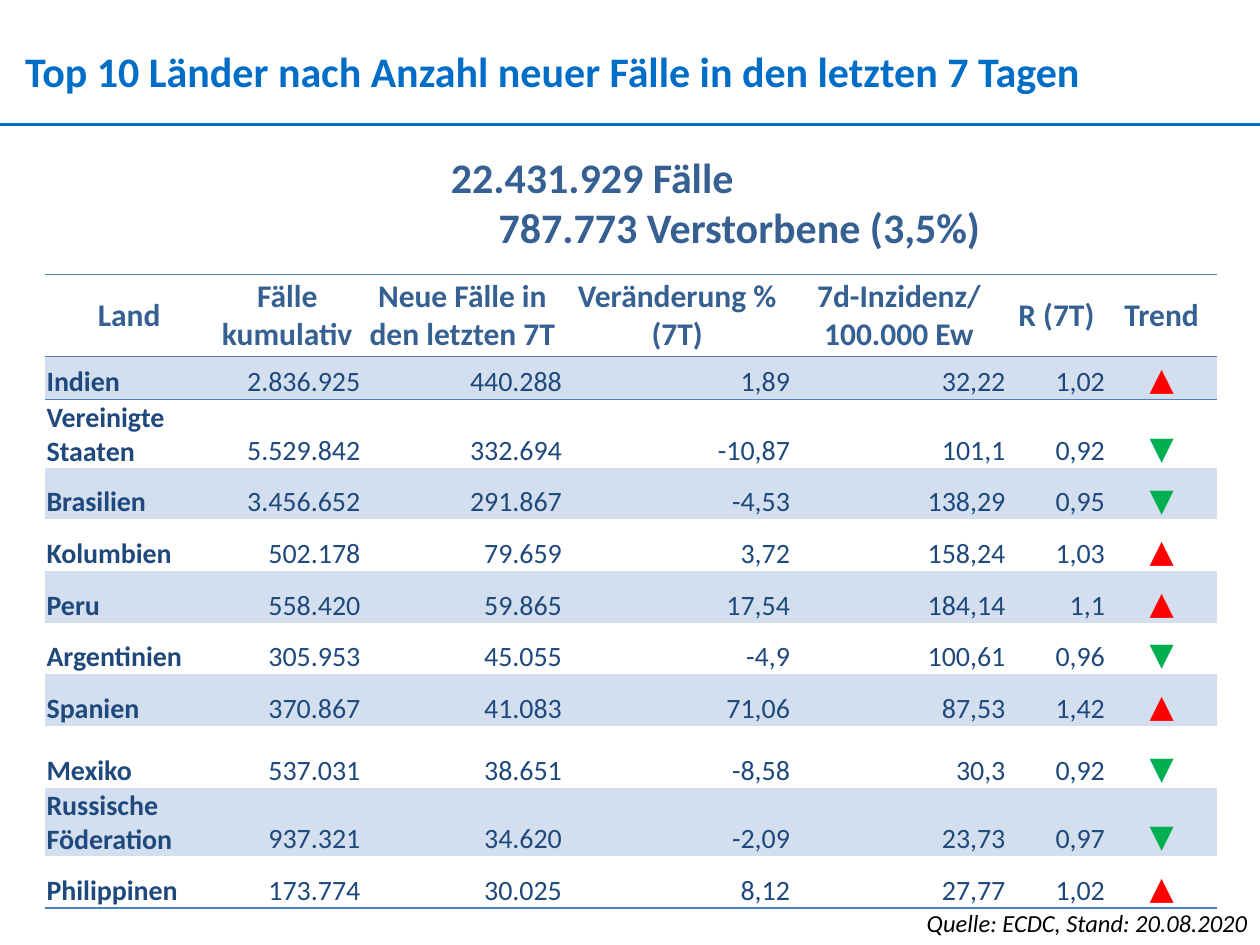
from lxml.etree import SubElement
from pptx import Presentation
from pptx.dml.color import RGBColor
from pptx.enum.shapes import MSO_CONNECTOR as CONN
from pptx.enum.text import MSO_ANCHOR as ANCHOR, MSO_AUTO_SIZE as AUTO, PP_ALIGN as ALIGN
from pptx.oxml.ns import qn
from pptx.util import Inches, Pt

COLORS = {"title": "006EC7", "head": "366092", "body": "1F497D", "band": "D3DFEE",
          "rule": "4F81BD", "up": "FF0000", "down": "00B050", "source": "000000"}
NO_STYLE = "{2D5ABB26-0587-4C30-8999-92F81FD0307C}"
COLS = [1.33, 1.18, 1.6, 1.81, 1.71, 0.79, 0.88]
ROWS = [0.65, 0.34, 0.49, 0.41, 0.41, 0.41, 0.41, 0.41, 0.49, 0.41, 0.41]
HEADER = ["Land", "Fälle kumulativ", "Neue Fälle in den letzten 7T", "Veränderung % (7T)",
          "7d-Inzidenz/ 100.000 Ew", "R (7T)", "Trend"]
COUNTRIES = [
    ["Indien", "2.836.925", "440.288", "1,89", "32,22", "1,02", "▲"],
    ["Vereinigte Staaten", "5.529.842", "332.694", "-10,87", "101,1", "0,92", "▼"],
    ["Brasilien", "3.456.652", "291.867", "-4,53", "138,29", "0,95", "▼"],
    ["Kolumbien", "502.178", "79.659", "3,72", "158,24", "1,03", "▲"],
    ["Peru", "558.420", "59.865", "17,54", "184,14", "1,1", "▲"],
    ["Argentinien", "305.953", "45.055", "-4,9", "100,61", "0,96", "▼"],
    ["Spanien", "370.867", "41.083", "71,06", "87,53", "1,42", "▲"],
    ["Mexiko", "537.031", "38.651", "-8,58", "30,3", "0,92", "▼"],
    ["Russische Föderation", "937.321", "34.620", "-2,09", "23,73", "0,97", "▼"],
    ["Philippinen", "173.774", "30.025", "8,12", "27,77", "1,02", "▲"],
]


class Deck:
    """Holds the style and the current slide and adds its elements."""

    font = "Calibri"

    def __init__(self, s):
        self.s = s

    def color(self, name):
        return RGBColor.from_string(COLORS[name])

    def run(self, p, text, color, align=ALIGN.LEFT, **fmt):
        p.alignment = align
        r = p.add_run()
        r.text = text
        for key, value in {"name": self.font, **fmt}.items():
            setattr(r.font, key, value)
        r.font.color.rgb = self.color(color)

    def text(self, box, lines, color, inset=None, indents=(0,), **fmt):
        tf = self.s.shapes.add_textbox(*map(Inches, box)).text_frame
        tf.word_wrap, tf.auto_size = True, AUTO.SHAPE_TO_FIT_TEXT
        if inset is not None:
            self.margins(tf, [inset] * 4)
        for i, (line, indent) in enumerate(zip(lines, indents)):
            p = tf.add_paragraph() if i else tf.paragraphs[0]
            if indent:
                p._p.get_or_add_pPr().set("marL", str(Inches(indent)))
            self.run(p, line, color, **fmt)

    def margins(self, target, values):
        for side, value in zip(("left", "top", "right", "bottom"), values):
            setattr(target, f"margin_{side}", Inches(value))

    def line(self, x1, y1, x2, y2, color, width):
        c = self.s.shapes.add_connector(CONN.STRAIGHT, *map(Inches, (x1, y1, x2, y2)))
        c.line.color.rgb, c.line.width = self.color(color), Pt(width)
        SubElement(c._element.spPr, qn("a:effectLst"))

    def border(self, cell, side):
        ln = SubElement(cell._tc.get_or_add_tcPr(), qn(f"a:ln{side}"), w=str(Pt(1)))
        fill = SubElement(ln, qn("a:solidFill"))
        SubElement(fill, qn("a:srgbClr"), val=COLORS["rule"])

    def cell(self, cell, text, i, j):
        sides = {0: "TB", 1: "T", len(ROWS) - 1: "B"}.get(i, "")
        for side in sides:
            self.border(cell, side)
        if i % 2:
            cell.fill.solid()
            cell.fill.fore_color.rgb = self.color("band")
        else:
            cell.fill.background()
        fmt = {"color": "body", "size": Pt(16), "bold": j == 0,
               "align": ALIGN.RIGHT if j else ALIGN.LEFT}
        if i == 0:
            fmt = {"color": "head", "size": Pt(18), "bold": True, "align": ALIGN.CENTER}
        elif j == len(COLS) - 1:
            fmt.update(color="up" if text == "▲" else "down", size=Pt(18), align=ALIGN.CENTER)
        cell.vertical_anchor = ANCHOR.BOTTOM if i else ANCHOR.MIDDLE
        self.margins(cell, (0.01, 0.01, 0.01, 0) if i else (0.06, 0, 0.06, 0))
        self.run(cell.text_frame.paragraphs[0], text, **fmt)

    def table(self, x, y, cols, heights, data):
        box = map(Inches, (x, y, sum(cols), sum(heights)))
        t = self.s.shapes.add_table(len(heights), len(cols), *box).table
        t.first_row = t.horz_banding = False
        t._tbl.tblPr.find(qn("a:tableStyleId")).text = NO_STYLE
        for col, width in zip(t.columns, cols):
            col.width = Inches(width)
        for i, (row, height, values) in enumerate(zip(t.rows, heights, data)):
            row.height = Inches(height)
            for j, (cell, value) in enumerate(zip(row.cells, values)):
                self.cell(cell, value, i, j)


def main():
    prs = Presentation()
    prs.slide_width, prs.slide_height = Inches(10), Inches(7.5)
    deck = Deck(prs.slides.add_slide(prs.slide_layouts[6]))
    deck.text((0.2, 0.36, 9.63, 0.4),
              ["Top 10 Länder nach Anzahl neuer Fälle in den letzten 7 Tagen"],
              "title", inset=0, size=Pt(24), bold=True)
    deck.line(0, 0.99, 10, 0.99, "title", 1.5)
    deck.text((3.48, 1.15, 4.44, 0.91), ["22.431.929 Fälle", "787.773 Verstorbene (3,5%)"],
              "head", indents=(0, 0.38), size=Pt(24), bold=True)
    deck.text((6.46, 7.16, 3.54, 0.34), ["Quelle: ECDC, Stand: 20.08.2020"],
              "source", align=ALIGN.RIGHT, size=Pt(14), italic=True)
    deck.table(0.36, 2.18, COLS, ROWS, [HEADER, *COUNTRIES])
    prs.save("out.pptx")


if __name__ == "__main__":
    main()
